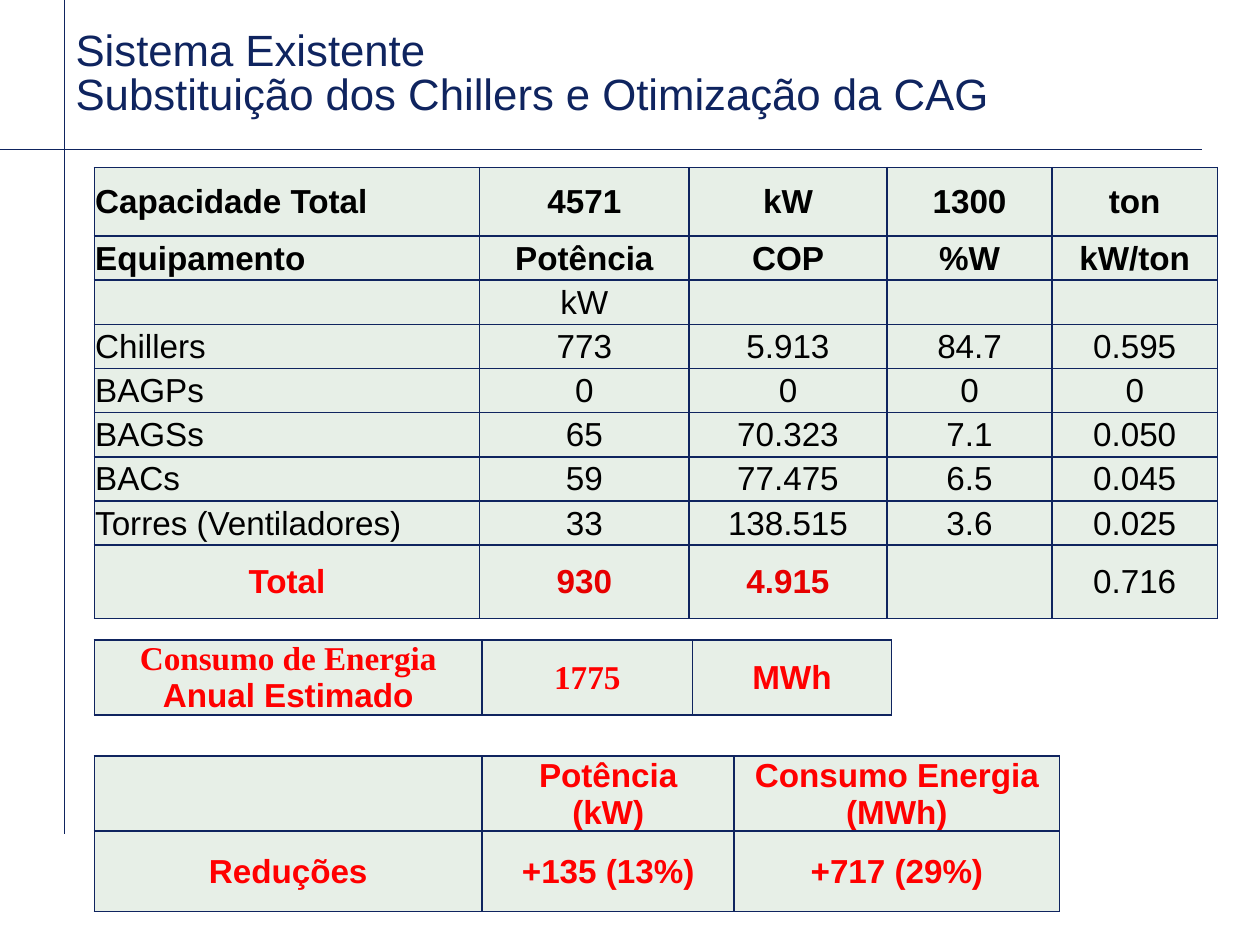
from lxml import etree
from pptx import Presentation
from pptx.dml.color import RGBColor
from pptx.enum.shapes import MSO_CONNECTOR
from pptx.enum.text import MSO_ANCHOR, PP_ALIGN
from pptx.oxml.ns import qn
from pptx.util import Cm, Pt

LEFT, CENTER = PP_ALIGN.LEFT, PP_ALIGN.CENTER
MIDDLE, BOTTOM = MSO_ANCHOR.MIDDLE, MSO_ANCHOR.BOTTOM
STRAIGHT = MSO_CONNECTOR.STRAIGHT

COLORS = {"navy": "0F245F", "mint": "E7EFE7", "black": "000000",
          "red": "FF0000", "dark": "E70000"}
SANS, SERIF = "Arial", "Times New Roman"

TITLE = "Sistema Existente \vSubstituição dos Chillers e Otimização da CAG"
RULES = [(1.3, 16.81, 1.3, 0), (0, 3.02, 24.23, 3.02)]

LOADS = [
    ["Capacidade Total", "4571", "kW", "1300", "ton"],
    ["Equipamento", "Potência", "COP", "%W", "kW/ton"],
    ["", "kW", "", "", ""],
    ["Chillers", "773", "5.913", "84.7", "0.595"],
    ["BAGPs", "0", "0", "0", "0"],
    ["BAGSs", "65", "70.323", "7.1", "0.050"],
    ["BACs", "59", "77.475", "6.5", "0.045"],
    ["Torres (Ventiladores)", "33", "138.515", "3.6", "0.025"],
    ["Total", "930", "4.915", "", "0.716"],
]
ENERGY = [["Consumo de Energia\nAnual Estimado", "1775", "MWh"]]
SAVINGS = [
    ["", "Potência\n(kW)", "Consumo Energia\n(MWh)"],
    ["Reduções", "+135 (13%)", "+717 (29%)"],
]


def load_style(row, col, line):
    total = row == len(LOADS) - 1
    align = LEFT if col == 0 and not total else CENTER
    if total and col < 3:
        return align, SANS, "dark" if col else "red", True
    return align, SANS, "black", row < 2


def energy_style(row, col, line):
    serif = (col, line) in [(0, 0), (1, 0)]
    return CENTER, SERIF if serif else SANS, "red", True


def saving_style(row, col, line):
    return CENTER, SANS, "red", True


TABLES = [
    (LOADS, 3.38, [7.77, 4.22, 3.99, 3.33, 3.33],
     [1.38] + [0.89] * 7 + [1.48], load_style),
    (ENERGY, 12.9, [7.82, 4.24, 4.01], [1.51], energy_style),
    (SAVINGS, 15.24, [7.82, 5.08, 6.56], [1.51, 1.62], saving_style),
]


def color(name):
    return RGBColor.from_string(COLORS[name])


def set_font(font, face, size, tint, bold):
    font.name, font.size, font.bold = face, Pt(size), bold
    font.color.rgb = color(tint)


def add_edges(cell):
    props = cell._tc.get_or_add_tcPr()
    for side in ("lnL", "lnR", "lnT", "lnB"):
        edge = etree.SubElement(props, qn("a:" + side), w=str(Pt(1)))
        fill = etree.SubElement(edge, qn("a:solidFill"))
        etree.SubElement(fill, qn("a:srgbClr"), val=COLORS["navy"])


def fill_cell(cell, text, row, col, style):
    add_edges(cell)
    cell.fill.solid()
    cell.fill.fore_color.rgb = color("mint")
    cell.vertical_anchor = MIDDLE
    cell.margin_left = cell.margin_right = cell.margin_top = Cm(0.02)
    cell.margin_bottom = 0
    cell.text_frame.text = text
    for line, para in enumerate(cell.text_frame.paragraphs):
        para.alignment, face, tint, bold = style(row, col, line)
        for run in para.runs:
            set_font(run.font, face, 19, tint, bold)


def add_table(slide, data, top, widths, heights, style):
    frame = slide.shapes.add_table(len(data), len(widths), Cm(1.9), Cm(top),
                                   Cm(sum(widths)), Cm(sum(heights)))
    table = frame.table
    table.first_row = table.horz_banding = False
    for col, width in zip(table.columns, widths):
        col.width = Cm(width)
    for row, height in zip(table.rows, heights):
        row.height = Cm(height)
    for row, texts in enumerate(data):
        for col, text in enumerate(texts):
            fill_cell(table.cell(row, col), text, row, col, style)


def add_rule(slide, ends):
    rule = slide.shapes.add_connector(STRAIGHT, *map(Cm, ends))
    rule.line.color.rgb = color("navy")
    rule.line.width = Pt(0.75)
    etree.SubElement(rule._element.spPr, qn("a:effectLst"))


def set_title(title):
    title.left, title.top = Cm(1.27), Cm(0.64)
    title.width, title.height = Cm(19.25), Cm(1.9)
    frame = title.text_frame
    frame.text = TITLE
    frame.word_wrap = True
    frame.vertical_anchor = BOTTOM
    para = frame.paragraphs[0]
    para.alignment, para.line_spacing = LEFT, 0.85
    for run in para.runs:
        set_font(run.font, SANS, 25, "navy", False)


def main():
    deck = Presentation()
    deck.slide_width, deck.slide_height = Cm(25.4), Cm(19.05)
    slide = deck.slides.add_slide(deck.slide_layouts[5])
    for ends in RULES:
        add_rule(slide, ends)
    set_title(slide.shapes.title)
    for table in TABLES:
        add_table(slide, *table)
    deck.save("out.pptx")


if __name__ == "__main__":
    main()
